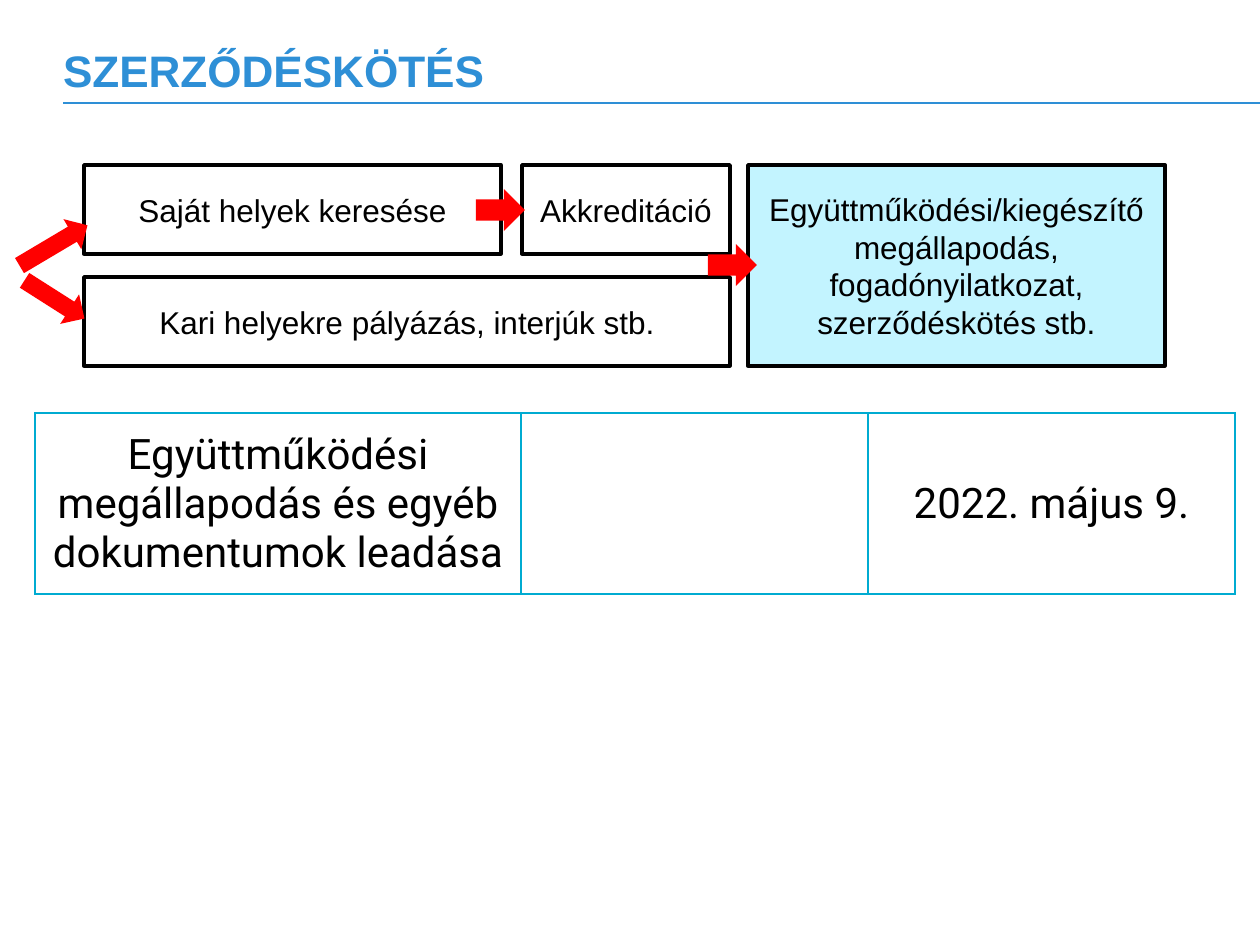
from lxml import etree
from pptx import Presentation
from pptx.dml.color import RGBColor
from pptx.enum.shapes import MSO_CONNECTOR, MSO_SHAPE
from pptx.enum.text import MSO_ANCHOR, MSO_AUTO_SIZE, PP_ALIGN
from pptx.oxml.ns import qn
from pptx.util import Emu, Pt

RECT, ARROW = MSO_SHAPE.RECTANGLE, MSO_SHAPE.RIGHT_ARROW
CENTER, LEFT = PP_ALIGN.CENTER, PP_ALIGN.LEFT
MIDDLE = MSO_ANCHOR.MIDDLE
BLUE, TEAL, RED, BLACK, WHITE, PALE = (
    "2E8FD6", "00ABD1", "FF0000", "000000", "FFFFFF", "C3F4FF")


def px(n):
    return Emu(round(n * 914400 / 126))


def rgb(color):
    return RGBColor.from_string(color)


prs = Presentation()
prs.slide_width, prs.slide_height = px(1260), px(945)
s = prs.slides.add_slide(prs.slide_layouts[5])

# Title and the rule below it
title = s.shapes.title
title.left, title.top, title.width, title.height = px(63), px(50), px(1134), px(39)
tf = title.text_frame
tf.text = "SZERZŐDÉSKÖTÉS"
tf.auto_size = MSO_AUTO_SIZE.NONE
tf.vertical_anchor = MIDDLE
tf.margin_left = tf.margin_right = tf.margin_top = tf.margin_bottom = 0
p = tf.paragraphs[0]
p.alignment = LEFT
font = p.runs[0].font
font.name, font.size, font.bold = "Arial", Pt(25.2), True
font.color.rgb = rgb(BLUE)

rule = s.shapes.add_connector(MSO_CONNECTOR.STRAIGHT, px(63), px(103), px(1260), px(103))
rule.line.color.rgb = rgb(BLUE)
rule.line.width = Pt(1.5)
etree.SubElement(rule._element.spPr, qn("a:effectLst"))

# Process boxes
boxes = [
    ("Saját helyek keresése", 84, 165, 417, 89, WHITE),
    ("Kari helyekre pályázás, interjúk stb.", 84, 277, 646, 89, WHITE),
    ("Akkreditáció", 522, 165, 208, 89, WHITE),
    ("Együttműködési/kiegészítő megállapodás, fogadónyilatkozat, "
     "szerződéskötés stb.", 748, 165, 417, 201, PALE),
]
for text, x, y, w, h, fill in boxes:
    sp = s.shapes.add_shape(RECT, px(x), px(y), px(w), px(h))
    sp.shadow.inherit = False
    sp.fill.solid()
    sp.fill.fore_color.rgb = rgb(fill)
    sp.line.color.rgb = rgb(BLACK)
    sp.line.width = Pt(2)
    tf = sp.text_frame
    tf.text = text
    tf.word_wrap = True
    tf.vertical_anchor = MIDDLE
    p = tf.paragraphs[0]
    p.alignment = CENTER
    font = p.runs[0].font
    font.name, font.size = "Arial", Pt(18)
    font.color.rgb = rgb(BLACK)

# Red arrows between the steps
arrows = [
    (19, 282, 71, 35, 32.5),
    (476, 189, 49, 42, 0),
    (708, 244, 49, 42, 0),
    (14, 228, 79, 35, 329.3),
]
for x, y, w, h, angle in arrows:
    sp = s.shapes.add_shape(ARROW, px(x), px(y), px(w), px(h))
    sp.shadow.inherit = False
    sp.fill.solid()
    sp.fill.fore_color.rgb = rgb(RED)
    sp.line.fill.background()
    sp.rotation = angle

# Deadline table
texts = ["Együttműködési megállapodás és egyéb dokumentumok leadása", "", "2022. május 9."]
widths = [486, 347, 367]
table = s.shapes.add_table(1, 3, px(35), px(413), px(sum(widths)), px(181)).table
for i, (text, width) in enumerate(zip(texts, widths)):
    table.columns[i].width = px(width)
    cell = table.cell(0, i)
    cell.text = text
    cell.vertical_anchor = MIDDLE
    cell.margin_left = cell.margin_right = cell.margin_top = px(1)
    cell.margin_bottom = 0
    p = cell.text_frame.paragraphs[0]
    p.alignment = CENTER
    for r in p.runs:
        r.font.name, r.font.size, r.font.bold = "Roboto", Pt(24), False
        r.font.color.rgb = rgb(BLACK)
    # Borders come before the fill in the cell properties
    tcPr = cell._tc.get_or_add_tcPr()
    for side in ("a:lnL", "a:lnR", "a:lnT", "a:lnB"):
        ln = etree.SubElement(tcPr, qn(side), w=str(Pt(1)))
        solid = etree.SubElement(ln, qn("a:solidFill"))
        etree.SubElement(solid, qn("a:srgbClr"), val=TEAL)
    cell.fill.solid()
    cell.fill.fore_color.rgb = rgb(WHITE)

prs.save("out.pptx")
